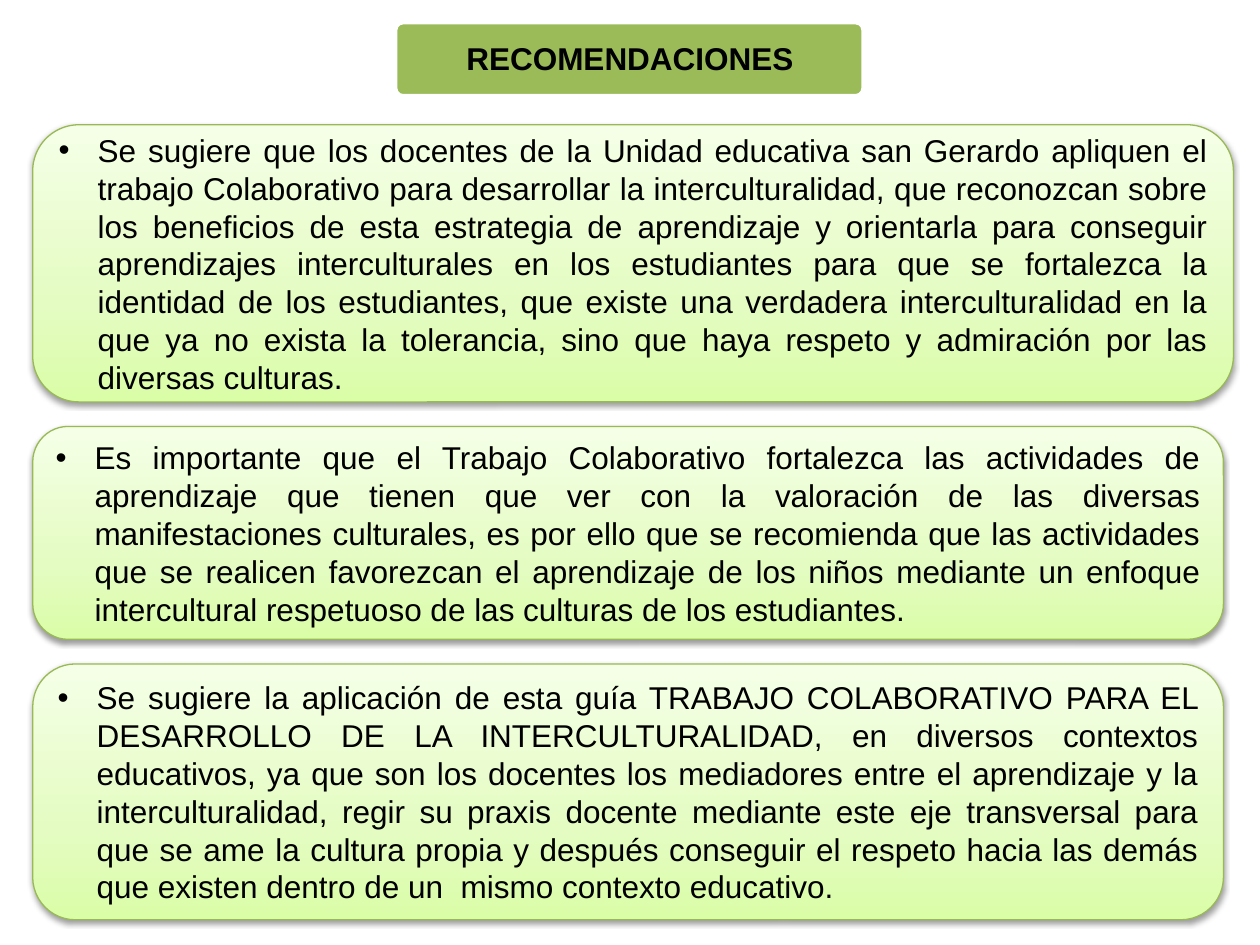
from typing import NamedTuple

from pptx import Presentation
from pptx.dml.color import RGBColor
from pptx.enum.shapes import MSO_SHAPE
from pptx.enum.text import MSO_ANCHOR, PP_ALIGN
from pptx.oxml import parse_xml
from pptx.oxml.ns import nsdecls
from pptx.util import Emu, Inches, Pt

ROUND = MSO_SHAPE.ROUNDED_RECTANGLE
MIDDLE = MSO_ANCHOR.MIDDLE
CENTER, JUSTIFY = PP_ALIGN.CENTER, PP_ALIGN.JUSTIFY
WIDE, HIGH = Inches(10), Inches(7.5)
BLACK, WHITE, GREEN, EDGE = "000000", "FFFFFF", "9BBB59", "98B955"
STOPS = ((0, "DAFDA7"), (35, "E4FCC2"), (100, "F5FFE7"))
LEFT, TOP, GAP = 2.6, 13.2, 2.6  # percent of the slide


class Box(NamedTuple):
    """Place and size in percent of the slide."""
    left: float
    top: float
    wide: float
    high: float


class Card(NamedTuple):
    wide: float
    high: float
    text: str


CARDS = (
    Card(95.3, 29.33,
         "Se sugiere que los docentes de la Unidad educativa san Gerardo apliquen el "
         "trabajo Colaborativo para desarrollar la interculturalidad, que reconozcan "
         "sobre los beneficios de esta estrategia de aprendizaje y orientarla para "
         "conseguir aprendizajes interculturales en los estudiantes para que se "
         "fortalezca la identidad de los estudiantes, que existe una verdadera "
         "interculturalidad en la que ya no exista la tolerancia, sino que haya "
         "respeto y admiración por las diversas culturas."),
    Card(94.5, 22.53,
         "Es importante que el Trabajo Colaborativo fortalezca las actividades de "
         "aprendizaje que tienen que ver con la valoración de las diversas "
         "manifestaciones culturales, es por ello que se recomienda que las "
         "actividades que se realicen favorezcan el aprendizaje de los niños mediante "
         "un enfoque intercultural respetuoso de las culturas de los estudiantes."),
    Card(94.5, 27.07,
         "Se sugiere la aplicación de esta guía TRABAJO COLABORATIVO PARA EL "
         "DESARROLLO DE LA INTERCULTURALIDAD, en diversos contextos educativos, ya "
         "que son los docentes los mediadores entre el aprendizaje y la "
         "interculturalidad, regir su praxis docente mediante este eje transversal "
         "para que se ame la cultura propia y después conseguir el respeto hacia las "
         "demás que existen dentro de un  mismo contexto educativo."),
)


def color(code: str) -> RGBColor:
    return RGBColor.from_string(code)


def place(box: Box) -> tuple:
    return (Emu(round(WIDE * box.left / 100)), Emu(round(HIGH * box.top / 100)),
            Emu(round(WIDE * box.wide / 100)), Emu(round(HIGH * box.high / 100)))


def add_panel(slide, box: Box, edge: str, weight: float):
    panel = slide.shapes.add_shape(ROUND, *place(box))
    panel.shadow.inherit = False
    panel.line.color.rgb = color(edge)
    panel.line.width = Pt(weight)
    return panel


def add_text(frame, text: str, align, bold: bool = False):
    frame.word_wrap = True
    frame.vertical_anchor = MIDDLE
    para = frame.paragraphs[0]
    para.alignment = align
    run = para.add_run()
    run.text = text
    run.font.name, run.font.size, run.font.bold = "Arial", Pt(18), bold
    run.font.color.rgb = color(BLACK)
    return para


def add_shade(panel) -> None:
    """Upward gradient and a soft shadow below."""
    stops = "".join(f'<a:gs pos="{pos * 1000}"><a:srgbClr val="{code}"/></a:gs>'
                    for pos, code in STOPS)
    panel.fill.background()
    props = panel.fill._xPr
    props.replace(props.find("{*}noFill"), parse_xml(
        f'<a:gradFill {nsdecls("a")} rotWithShape="1"><a:gsLst>{stops}</a:gsLst>'
        '<a:lin ang="16200000" scaled="0"/></a:gradFill>'))
    props.replace(props.find("{*}effectLst"), parse_xml(
        f'<a:effectLst {nsdecls("a")}><a:outerShdw blurRad="{Pt(3.1)}" '
        f'dist="{Pt(1.6)}" dir="5400000" rotWithShape="0"><a:srgbClr val="{BLACK}">'
        '<a:alpha val="38000"/></a:srgbClr></a:outerShdw></a:effectLst>'))


def add_bullet(para) -> None:
    props = para._p.get_or_add_pPr()
    props.set("marL", str(Inches(0.31)))
    props.set("indent", str(-Inches(0.31)))
    props.append(parse_xml(f'<a:buFont {nsdecls("a")} typeface="Arial"/>'))
    props.append(parse_xml(f'<a:buChar {nsdecls("a")} char="•"/>'))


def add_title(slide) -> None:
    panel = add_panel(slide, Box(31.4, 2.4, 37.1, 7.73), WHITE, 2)
    panel.adjustments[0] = 0.1
    panel.fill.solid()
    panel.fill.fore_color.rgb = color(GREEN)
    label = slide.shapes.add_textbox(*place(Box(32, 2.67, 36, 7.33)))
    frame = label.text_frame
    frame.margin_left = frame.margin_right = Inches(0.04)
    frame.margin_top = frame.margin_bottom = Inches(0.03)
    add_text(frame, "RECOMENDACIONES", CENTER, True).line_spacing = 0.9


def add_card(slide, card: Card, top: float) -> None:
    panel = add_panel(slide, Box(LEFT, top, card.wide, card.high), EDGE, 0.75)
    add_shade(panel)
    add_bullet(add_text(panel.text_frame, card.text, JUSTIFY))


def main() -> None:
    deck = Presentation()
    deck.slide_width, deck.slide_height = WIDE, HIGH
    slide = deck.slides.add_slide(deck.slide_layouts[6])
    add_title(slide)
    # Recommendations, stacked with equal gaps
    top = TOP
    for card in CARDS:
        add_card(slide, card, top)
        top += card.high + GAP
    deck.save("out.pptx")


if __name__ == "__main__":
    main()
